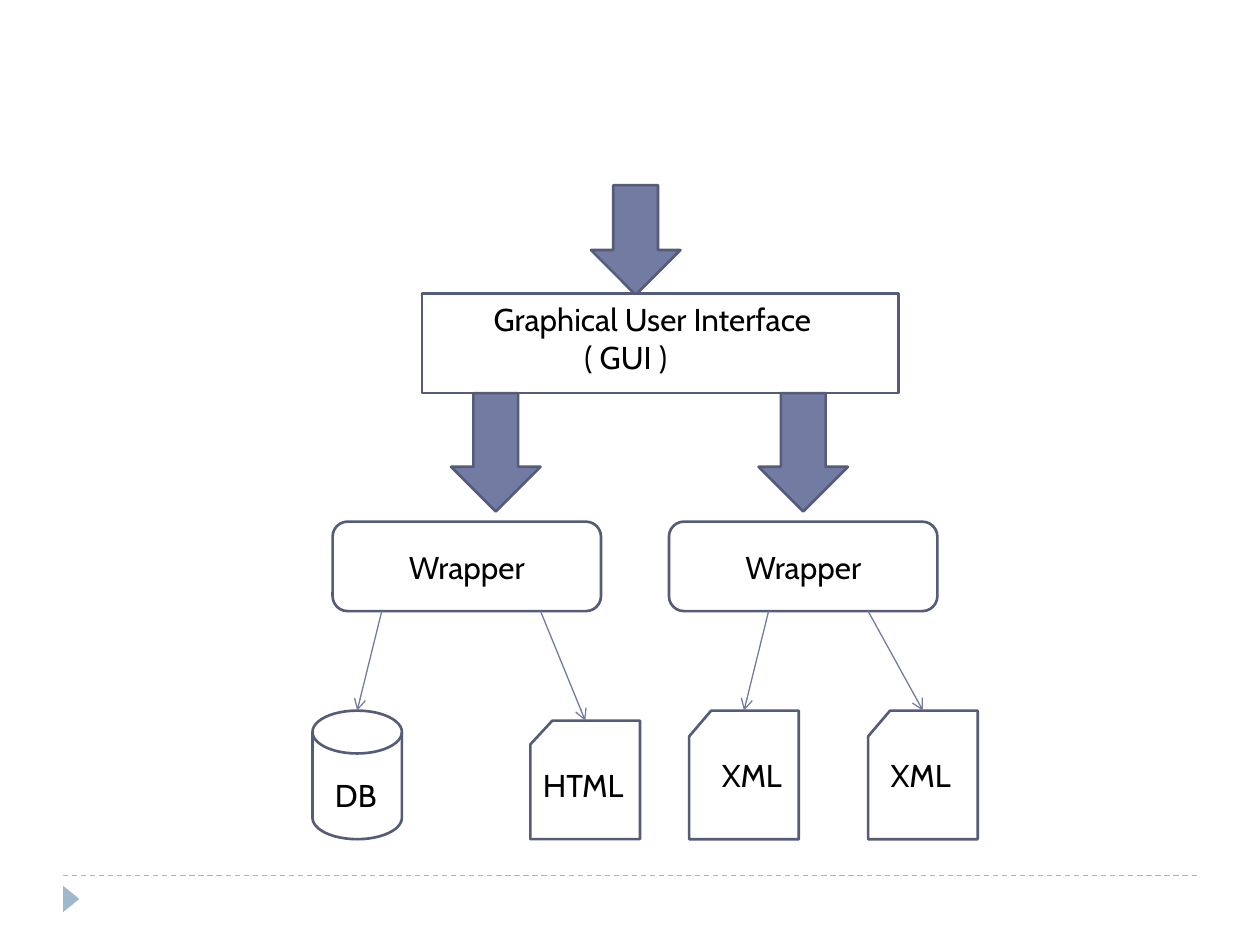
from dataclasses import dataclass

from lxml.etree import SubElement
from pptx import Presentation
from pptx.dml.color import RGBColor
from pptx.enum.dml import MSO_LINE
from pptx.enum.shapes import MSO_CONNECTOR, MSO_SHAPE as Preset
from pptx.enum.text import PP_ALIGN as Align
from pptx.oxml.ns import qn
from pptx.shapes.autoshape import Shape
from pptx.shapes.connector import Connector
from pptx.util import Inches, Pt

WHITE, BLACK = "FFFFFF", "000000"
ACCENT, OUTLINE, FOOTER = "727CA3", "545C79", "9FB8CD"
WRAPPER_TOP, WRAPPER_BOTTOM, SOURCE_BOTTOM = 4.14, 4.85, 6.66


@dataclass
class Box:
    left: float
    top: float
    width: float
    height: float


@dataclass
class Source:
    kind: Preset
    box: Box
    label: str
    label_box: Box
    link_x: float


@dataclass
class Branch:
    arrow_left: float
    wrapper_left: float
    sources: list[Source]


def paint(color_format, color: str) -> None:
    color_format.rgb = RGBColor.from_string(color)


def add_outline(slide, kind: Preset, box: Box, fill: str = WHITE,
                line: str | None = OUTLINE) -> Shape:
    shape = slide.shapes.add_shape(
        kind, Inches(box.left), Inches(box.top), Inches(box.width), Inches(box.height))
    shape.shadow.inherit = False
    shape.fill.solid()
    paint(shape.fill.fore_color, fill)
    if line:
        paint(shape.line.color, line)
        shape.line.width = Pt(1.5)
    else:
        shape.line.fill.background()
    return shape


def add_label(slide, box: Box, lines: list[str], align: Align = Align.LEFT) -> Shape:
    label = slide.shapes.add_textbox(
        Inches(box.left), Inches(box.top), Inches(box.width), Inches(box.height))
    frame = label.text_frame
    frame.word_wrap = True
    frame.text = "\n".join(lines)
    for paragraph in frame.paragraphs:
        paragraph.alignment = align
        paragraph.font.name = "Cabin"
        paragraph.font.size = Pt(18)
        paint(paragraph.font.color, BLACK)
    return label


def add_line(slide, start: tuple[float, float], end: tuple[float, float],
             color: str) -> Connector:
    line = slide.shapes.add_connector(
        MSO_CONNECTOR.STRAIGHT, *map(Inches, start), *map(Inches, end))
    paint(line.line.color, color)
    line.line.width = Pt(0.75)
    SubElement(line._element.spPr, qn("a:effectLst"))
    return line


def add_source(slide, source: Source) -> None:
    box = source.box
    shape = add_outline(slide, source.kind, box)
    link = add_line(slide, (source.link_x, WRAPPER_BOTTOM),
                    (box.left + box.width / 2, box.top), ACCENT)
    SubElement(link.line._get_or_add_ln(), qn("a:tailEnd"), type="arrow")
    if source.kind == Preset.FLOWCHART_CARD:
        link.end_connect(shape, 0)
    add_label(slide, source.label_box, [source.label])


def add_branch(slide, branch: Branch) -> None:
    add_outline(slide, Preset.DOWN_ARROW, Box(branch.arrow_left, 3.12, 0.71, 0.94), ACCENT)
    add_outline(slide, Preset.ROUNDED_RECTANGLE,
                Box(branch.wrapper_left, WRAPPER_TOP, 2.13, WRAPPER_BOTTOM - WRAPPER_TOP))
    add_label(slide, Box(branch.wrapper_left + 0.08, 4.3, 1.97, 0.4),
              ["Wrapper"], Align.CENTER)
    for source in branch.sources:
        add_source(slide, source)


def card(left: float, top: float, label: str, label_box: Box, link_x: float) -> Source:
    return Source(Preset.FLOWCHART_CARD, Box(left, top, 0.87, SOURCE_BOTTOM - top),
                  label, label_box, link_x)


BRANCHES = [
    Branch(3.58, 2.64, [
        Source(Preset.FLOWCHART_MAGNETIC_DISK, Box(2.48, 5.64, 0.71, 1.02),
               "DB", Box(2.56, 6.11, 0.55, 0.4), 3.03),
        card(4.21, 5.72, "HTML", Box(4.21, 6.03, 0.87, 0.4), 4.29),
    ]),
    Branch(6.02, 5.31, [
        card(5.47, 5.64, "XML", Box(5.63, 5.95, 0.71, 0.4), 6.1),
        card(6.89, 5.64, "XML", Box(6.97, 5.95, 0.71, 0.4), 6.89),
    ]),
]


def main() -> None:
    deck = Presentation()
    deck.slide_width, deck.slide_height = Inches(10), Inches(7.5)
    slide = deck.slides.add_slide(deck.slide_layouts[6])

    footer_rule = add_line(slide, (0.5, 6.95), (9.5, 6.95), FOOTER)
    footer_rule.line.dash_style = MSO_LINE.DASH
    footer_marker = add_outline(slide, Preset.ISOSCELES_TRIANGLE,
                                Box(0.46, 7.07, 0.21, 0.13), FOOTER, None)
    footer_marker.rotation = 90

    add_outline(slide, Preset.DOWN_ARROW, Box(4.69, 1.47, 0.71, 0.87), ACCENT)
    add_outline(slide, Preset.RECTANGLE, Box(3.35, 2.33, 3.78, 0.79))
    interface = add_label(slide, Box(3.82, 2.33, 2.83, 0.71),
                          ["Graphical User Interface", "( GUI )"])
    abbreviation = interface.text_frame.paragraphs[1]
    abbreviation._p.get_or_add_pPr().set("marL", str(Inches(0.72)))

    for branch in BRANCHES:
        add_branch(slide, branch)
    deck.save("out.pptx")


if __name__ == "__main__":
    main()
